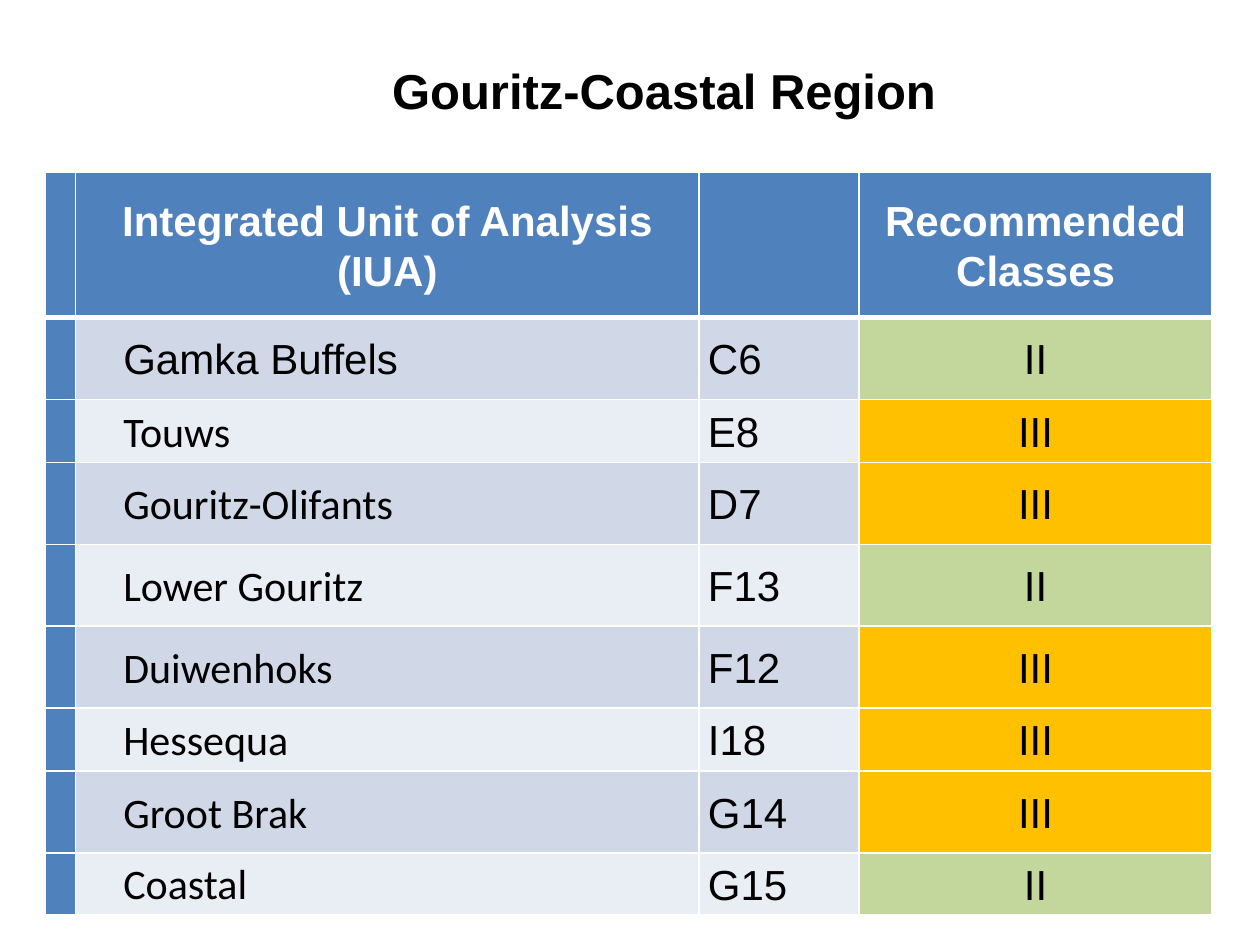
from lxml import etree
from pptx import Presentation
from pptx.dml.color import RGBColor
from pptx.enum.text import MSO_ANCHOR, PP_ALIGN
from pptx.oxml.ns import qn
from pptx.util import Inches, Pt

LEFT, CENTER = PP_ALIGN.LEFT, PP_ALIGN.CENTER
MIDDLE = MSO_ANCHOR.MIDDLE
TITLE_ONLY = 5

BLUE, WHITE, BLACK = "4F81BD", "FFFFFF", "000000"
BANDS = ("D0D8E8", "E9EDF4")
CLASS_FILLS = {"II": "C3D69B", "III": "FFC000"}

HEADINGS = ("", "Integrated Unit of Analysis (IUA)", "", "Recommended Classes")
# Unit, its font, code, recommended class, row height
UNITS = (
    ("Gamka Buffels", "Arial", "C6", "II", 0.65),
    ("Touws", "Calibri", "E8", "III", 0.5),
    ("Gouritz-Olifants", "Calibri", "D7", "III", 0.65),
    ("Lower Gouritz", "Calibri", "F13", "II", 0.65),
    ("Duiwenhoks", "Calibri", "F12", "III", 0.65),
    ("Hessequa", "Calibri", "I18", "III", 0.5),
    ("Groot Brak", "Calibri", "G14", "III", 0.65),
    ("Coastal", "Calibri", "G15", "II", 0.49),
)
COLUMN_WIDTHS = (0.23, 4.95, 1.27, 2.8)
HEADER_HEIGHT = 1.15
HEADER_RULE = 3


def color(hex_text):
    return RGBColor.from_string(hex_text)


def write_text(frame, text, size=24, font="Arial", text_color=BLACK, bold=False,
               align=LEFT, spacing=1.0, indent=0):
    paragraph = frame.paragraphs[0]
    paragraph.alignment = align
    paragraph.line_spacing = spacing
    if indent:
        properties = paragraph._p.get_or_add_pPr()
        properties.set("marL", str(Inches(indent)))
        properties.set("indent", "0")
    run = paragraph.add_run()
    run.text = text
    run.font.size = Pt(size)
    run.font.name = font
    run.font.bold = bold
    run.font.color.rgb = color(text_color)


class RegionSlide:
    def __init__(self, presentation):
        self.slide = presentation.slides.add_slide(
            presentation.slide_layouts[TITLE_ONLY])

    def title(self, text, left, top, width, height):
        shape = self.slide.shapes.title
        shape.left, shape.top = Inches(left), Inches(top)
        shape.width, shape.height = Inches(width), Inches(height)
        shape.text_frame.vertical_anchor = MIDDLE
        write_text(shape.text_frame, text, size=28, bold=True, align=CENTER)

    def table(self, left, top, widths, heights):
        table = self.slide.shapes.add_table(
            len(heights), len(widths), Inches(left), Inches(top),
            Inches(sum(widths)), Inches(sum(heights))).table
        for column, width in zip(table.columns, widths):
            column.width = Inches(width)
        for row, height in zip(table.rows, heights):
            row.height = Inches(height)
        return table

    def cell(self, cell, text, fill, top=1, bottom=1, **text_format):
        cell.fill.solid()
        cell.fill.fore_color.rgb = color(fill)
        self.borders(cell, top, bottom)
        if text:
            cell.vertical_anchor = MIDDLE
            cell.margin_left = cell.margin_right = Inches(0.07)
            cell.margin_top = cell.margin_bottom = 0
            write_text(cell.text_frame, text, spacing=1.07, **text_format)

    def borders(self, cell, top, bottom):
        properties = cell._tc.get_or_add_tcPr()
        sides = (("a:lnL", 1), ("a:lnR", 1), ("a:lnT", top), ("a:lnB", bottom))
        for position, (side, width) in enumerate(sides):
            line = etree.Element(qn(side), w=str(Pt(width)))
            fill = etree.SubElement(line, qn("a:solidFill"))
            etree.SubElement(fill, qn("a:srgbClr"), val=WHITE)
            properties.insert(position, line)


def main():
    presentation = Presentation()
    presentation.slide_width, presentation.slide_height = Inches(10), Inches(7.5)
    region = RegionSlide(presentation)

    region.title("Gouritz-Coastal Region", 2.77, 0.4, 5, 0.62)

    # Header row
    heights = [HEADER_HEIGHT] + [unit[-1] for unit in UNITS]
    table = region.table(0.36, 1.37, COLUMN_WIDTHS, heights)
    for column, heading in enumerate(HEADINGS):
        region.cell(table.cell(0, column), heading, BLUE, bottom=HEADER_RULE,
                    text_color=WHITE, bold=True, align=CENTER)

    # One banded row per unit, with its class in colour
    for row, (unit, font, code, unit_class, _) in enumerate(UNITS, start=1):
        band = BANDS[(row - 1) % 2]
        top = HEADER_RULE if row == 1 else 1
        region.cell(table.cell(row, 0), "", BLUE, top)
        region.cell(table.cell(row, 1), unit, band, top, font=font, indent=0.31)
        region.cell(table.cell(row, 2), code, band, top)
        region.cell(table.cell(row, 3), unit_class, CLASS_FILLS[unit_class], top,
                    align=CENTER)

    presentation.save("out.pptx")


if __name__ == "__main__":
    main()
